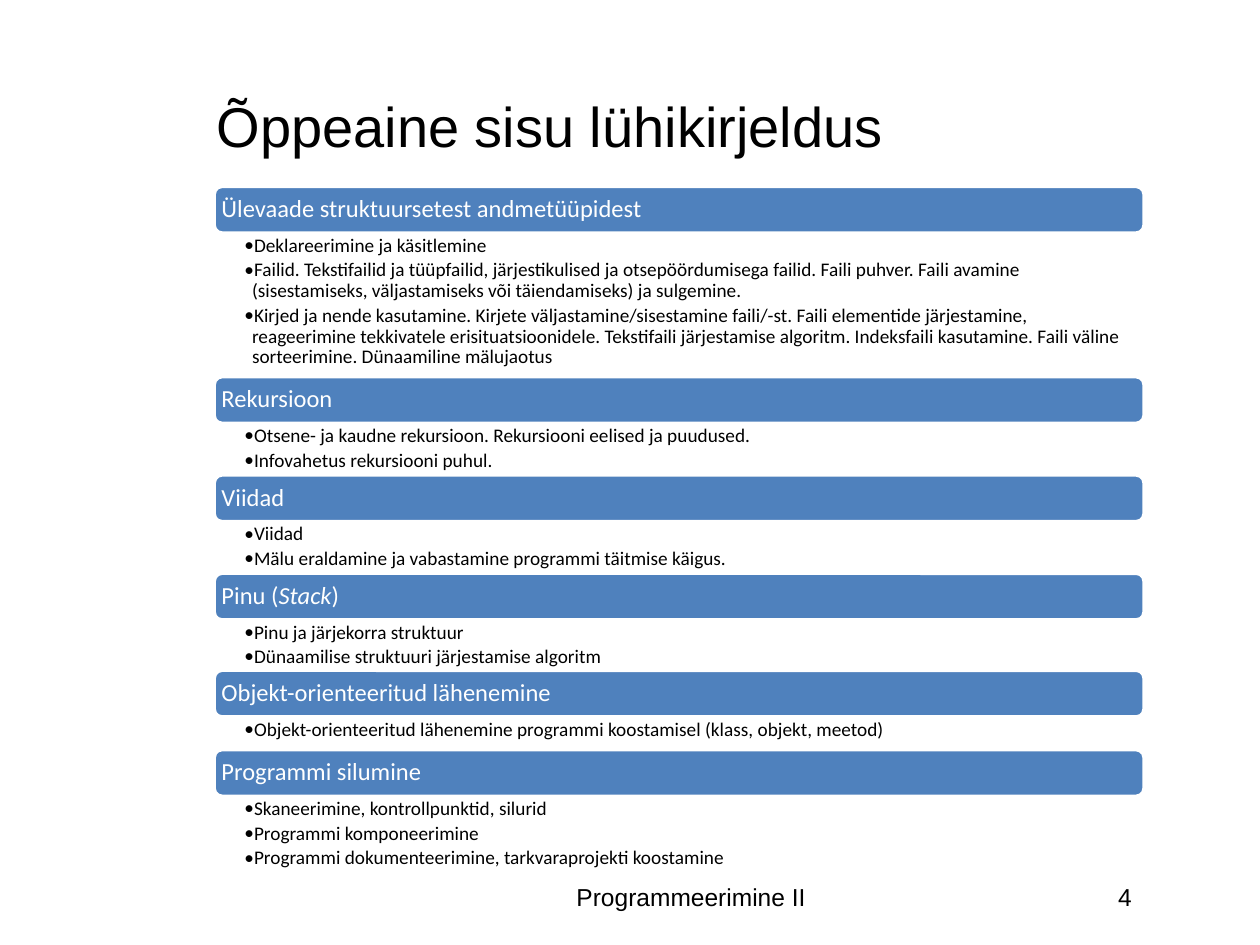
from lxml.etree import SubElement
from pptx import Presentation
from pptx.dml.color import RGBColor
from pptx.enum.shapes import MSO_SHAPE as SHAPE
from pptx.enum.text import MSO_ANCHOR as ANCHOR, PP_ALIGN as ALIGN
from pptx.oxml.ns import qn
from pptx.util import Inches, Pt

COLORS = {"bar": "4F81BD", "white": "FFFFFF", "text": "000000"}
BAR_H = 0.37

# Heading runs (text, italic), height of the bullet area, bullets
SECTIONS = [
    ([("Ülevaade struktuursetest andmetüüpidest", False)], 1.14, [
        "Deklareerimine ja käsitlemine",
        "Failid. Tekstifailid ja tüüpfailid, järjestikulised ja "
        "otsepöördumisega failid. Faili puhver. Faili avamine "
        "(sisestamiseks, väljastamiseks või täiendamiseks) ja sulgemine.",
        "Kirjed ja nende kasutamine. Kirjete väljastamine/sisestamine "
        "faili/-st. Faili elementide järjestamine, reageerimine tekkivatele "
        "erisituatsioonidele. Tekstifaili järjestamise algoritm. Indeksfaili "
        "kasutamine. Faili väline sorteerimine. Dünaamiline mälujaotus",
    ]),
    ([("Rekursioon", False)], 0.41, [
        "Otsene- ja kaudne rekursioon. Rekursiooni eelised ja puudused.",
        "Infovahetus rekursiooni puhul.",
    ]),
    ([("Viidad", False)], 0.41, [
        "Viidad",
        "Mälu eraldamine ja vabastamine programmi täitmise käigus.",
    ]),
    ([("Pinu (", False), ("Stack", True), (")", False)], 0.4, [
        "Pinu ja järjekorra struktuur",
        "Dünaamilise struktuuri järjestamise algoritm",
    ]),
    ([("Objekt-orienteeritud lähenemine", False)], 0.26, [
        "Objekt-orienteeritud lähenemine programmi koostamisel "
        "(klass, objekt, meetod)",
    ]),
    ([("Programmi silumine", False)], 0.62, [
        "Skaneerimine, kontrollpunktid, silurid",
        "Programmi komponeerimine",
        "Programmi dokumenteerimine, tarkvaraprojekti koostamine",
    ]),
]


def rgb(name):
    return RGBColor.from_string(COLORS[name])


def add_run(p, text, size, font, color="text", italic=False):
    r = p.add_run()
    r.text = text
    r.font.size = Pt(size)
    r.font.name = font
    r.font.color.rgb = rgb(color)
    if italic:
        r.font.italic = True


def set_frame(tf, anchor, left, top, right, bottom):
    tf.word_wrap = True
    tf.vertical_anchor = anchor
    tf.margin_left, tf.margin_top = Inches(left), Inches(top)
    tf.margin_right, tf.margin_bottom = Inches(right), Inches(bottom)


def add_bullet(p):
    p.level = 1
    pPr = p._p.get_or_add_pPr()
    pPr.set("marL", str(Inches(0.06)))
    pPr.set("indent", str(Inches(-0.06)))
    SubElement(pPr, qn("a:buFont")).set("typeface", "Calibri")
    SubElement(pPr, qn("a:buChar")).set("char", "•")


def add_label(slide, box, text, size, align=ALIGN.LEFT, anchor=ANCHOR.TOP):
    tf = slide.shapes.add_textbox(*map(Inches, box)).text_frame
    set_frame(tf, anchor, 0.1, 0.05, 0.1, 0.05)
    p = tf.paragraphs[0]
    p.alignment = align
    add_run(p, text, size, "Arial")


def add_heading(slide, box, runs):
    sp = slide.shapes.add_shape(SHAPE.ROUNDED_RECTANGLE, *map(Inches, box))
    sp.shadow.inherit = False
    sp.fill.solid()
    sp.fill.fore_color.rgb = rgb("bar")
    sp.line.color.rgb = rgb("white")
    sp.line.width = Pt(2)
    set_frame(sp.text_frame, ANCHOR.MIDDLE, 0.04, 0.04, 0.04, 0.04)
    p = sp.text_frame.paragraphs[0]
    p.alignment = ALIGN.LEFT
    p.line_spacing = 0.9
    for text, italic in runs:
        add_run(p, text, 14, "Calibri", "white", italic)


def add_bullets(slide, box, items):
    tf = slide.shapes.add_textbox(*map(Inches, box)).text_frame
    set_frame(tf, ANCHOR.TOP, 0.24, 0.02, 0.11, 0.02)
    for i, item in enumerate(items):
        p = tf.add_paragraph() if i else tf.paragraphs[0]
        add_bullet(p)
        p.line_spacing = 0.9
        p.space_after = Pt(2.2)
        add_run(p, item, 11, "Calibri")


def add_sections(slide, left, top, width):
    for runs, body_h, items in SECTIONS:
        add_heading(slide, (left, top, width, BAR_H), runs)
        add_bullets(slide, (left, top + BAR_H, width, body_h), items)
        top += BAR_H + body_h


def add_footer(slide, top, height):
    add_label(slide, (2.84, top, 5.29, height), "Programmeerimine II", 14,
              ALIGN.CENTER)
    add_label(slide, (8.23, top, 0.85, height), "4", 14, ALIGN.RIGHT)


def main():
    prs = Presentation()
    prs.slide_width, prs.slide_height = Inches(10), Inches(7.5)
    slide = prs.slides.add_slide(prs.slide_layouts[6])
    # Title
    add_label(slide, (1.62, 0.36, 7.44, 1.26), "Õppeaine sisu lühikirjeldus",
              32, anchor=ANCHOR.MIDDLE)
    # Course topics
    add_sections(slide, 1.7, 1.48, 7.38)
    # Course name and slide number
    add_footer(slide, 6.95, 0.4)
    prs.save("out.pptx")


if __name__ == "__main__":
    main()
